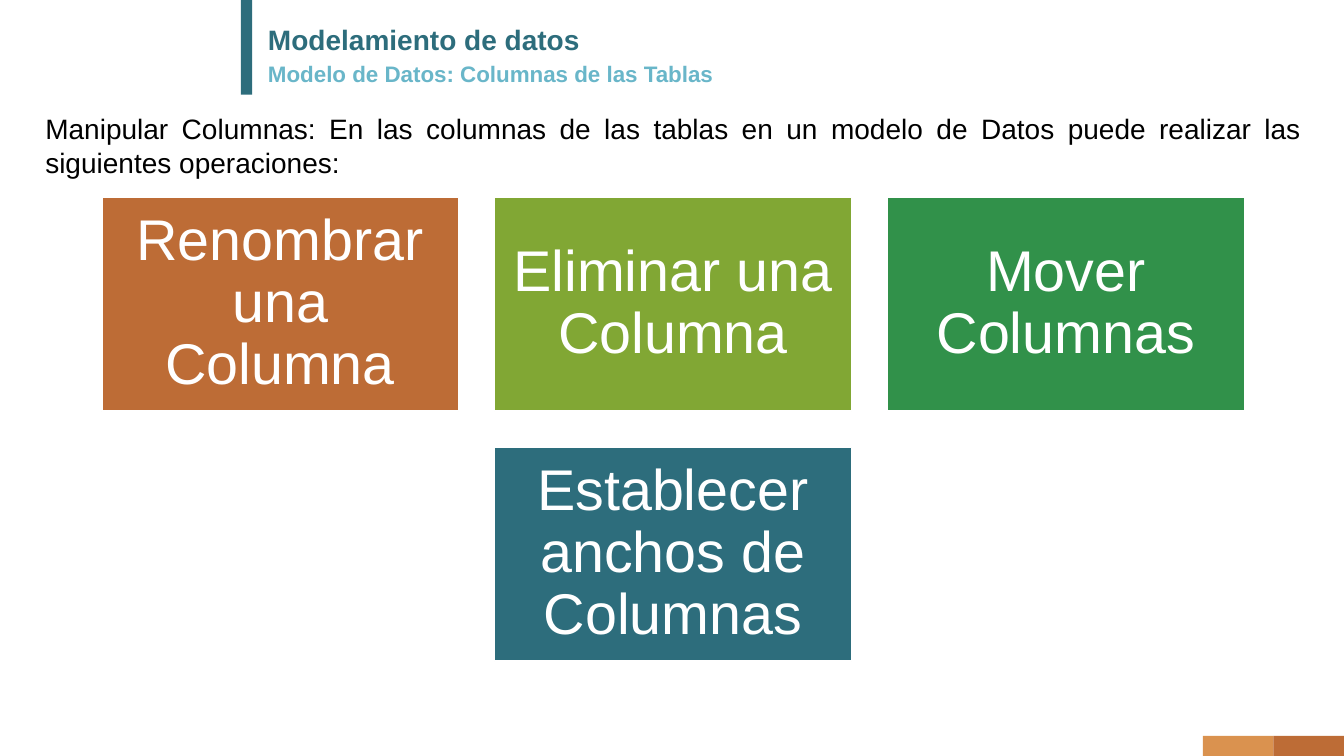
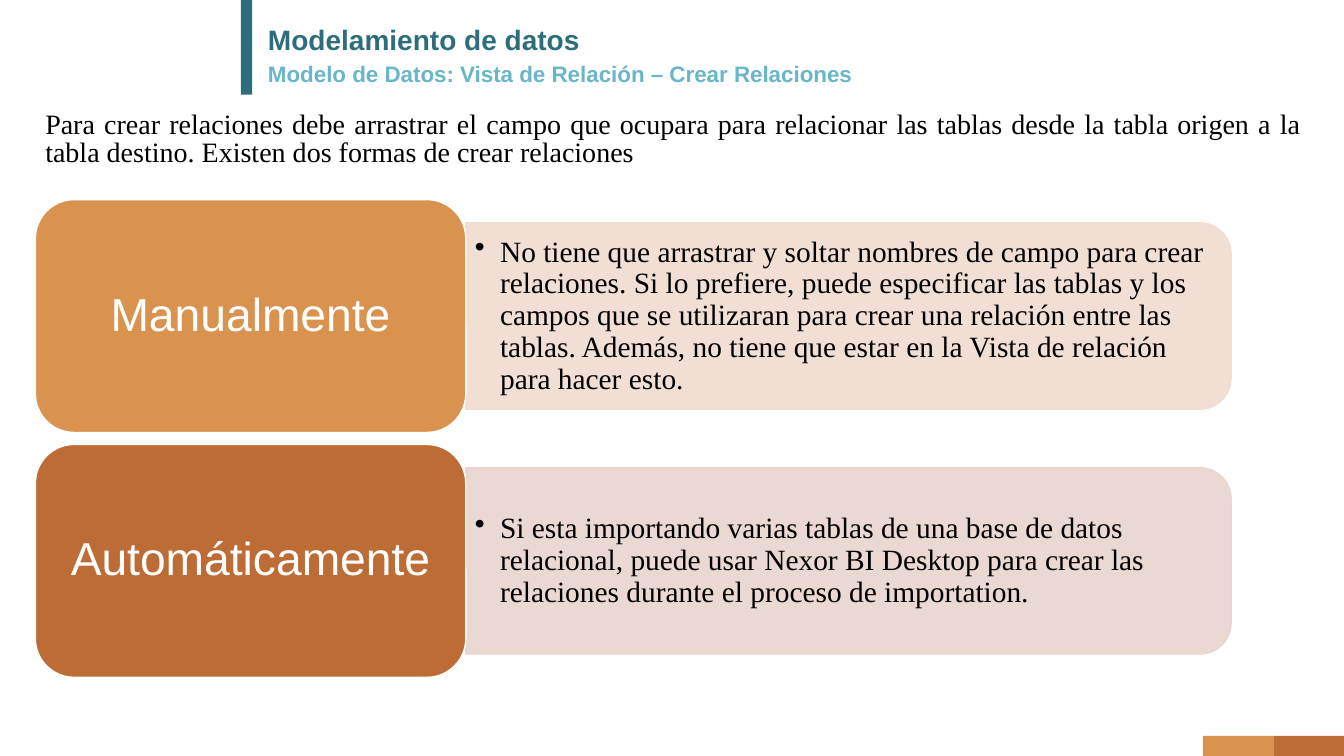
from dataclasses import dataclass

import pptx
import pptx.dml.color
import pptx.enum.shapes
import pptx.enum.text
import pptx.oxml.ns
import pptx.util
from lxml import etree

Inches = pptx.util.Inches
Pt = pptx.util.Pt
SHAPE = pptx.enum.shapes.MSO_SHAPE
ALIGN = pptx.enum.text.PP_ALIGN
ANCHOR = pptx.enum.text.MSO_ANCHOR
qn = pptx.oxml.ns.qn

COLORS = {
    "teal": "2D6D7C", "sky": "69B6C9", "amber": "DA924F", "rust": "BD6C36",
    "lime": "81A734", "green": "31914A", "peach": "F1DCD0", "rose": "E8D4CE",
    "white": "FFFFFF", "black": "000000",
}
SANS, SERIF = "Arial", "Times New Roman"
DEFAULT_INSETS = (0.1, 0.05)


@dataclass
class Box:
    left: float
    top: float
    width: float
    height: float

    def inner(self, left, top, width, height):
        """Return an inner box given in percent of this one."""
        return Box(self.left + self.width * left / 100,
                   self.top + self.height * top / 100,
                   self.width * width / 100, self.height * height / 100)

    def inches(self):
        return [Inches(v) for v in (self.left, self.top, self.width, self.height)]


PAGE = Box(0, 0, 13.33, 7.5)
ACCENT = PAGE.inner(17.93, 0, 0.83, 12.53)
TITLE = PAGE.inner(19.2, 2.8, 78.4, 5.33)
SUBTITLE = PAGE.inner(19.2, 7.73, 78.4, 5.33)
INTRO = PAGE.inner(2.63, 14.13, 94.97, 10.27)
FOOTER = PAGE.inner(89.5, 97.33, 10.5, 2.67)
CARDS = PAGE.inner(7.58, 26.13, 85, 61.33)
METHODS = PAGE.inner(2.63, 26.4, 88.97, 63.2)


def rgb(name):
    return pptx.dml.color.RGBColor.from_string(COLORS[name])


def add_block(slide, box, fill, kind=SHAPE.RECTANGLE, line=None):
    shape = slide.shapes.add_shape(kind, *box.inches())
    shape.shadow.inherit = False
    shape.fill.solid()
    shape.fill.fore_color.rgb = rgb(fill)
    if line:
        shape.line.color.rgb = rgb(line)
        shape.line.width = Pt(1)
    else:
        shape.line.fill.background()
    return shape


def write(shape, text, size, color, font=SANS, bold=False, align=ALIGN.LEFT,
          spacing=0.9, anchor=ANCHOR.TOP, insets=DEFAULT_INSETS, bullet=False):
    frame = shape.text_frame
    frame.word_wrap = True
    frame.vertical_anchor = anchor
    frame.margin_left = frame.margin_right = Inches(insets[0])
    frame.margin_top = frame.margin_bottom = Inches(insets[1])
    paragraph = frame.paragraphs[0]
    if bullet:
        properties = paragraph._p.get_or_add_pPr()
        properties.set("marL", str(Inches(0.25)))
        properties.set("indent", str(-Inches(0.25)))
        etree.SubElement(properties, qn("a:buChar"), char="•")
    paragraph.alignment = align
    paragraph.line_spacing = spacing
    run = paragraph.add_run()
    run.text = text
    run.font.name = font
    run.font.size = Pt(size)
    run.font.bold = bold
    run.font.color.rgb = rgb(color)


def add_text(slide, box, text, size, color, **style):
    write(slide.shapes.add_textbox(*box.inches()), text, size, color, **style)


def add_base_slide(presentation, subtitle):
    """Add a slide with the accent bar, footer band and both titles."""
    slide = presentation.slides.add_slide(presentation.slide_layouts[6])
    add_block(slide, ACCENT, "teal")
    for index, color in enumerate(("amber", "rust")):
        add_block(slide, FOOTER.inner(50 * index, 0, 50, 100), color)
    add_text(slide, TITLE, "Modelamiento de datos", 20, "teal", bold=True)
    add_text(slide, SUBTITLE, subtitle, 16, "sky", bold=True)
    return slide


def add_cards(slide, box, cards, columns=3, gap=0.36):
    """Lay cards out in rows, centring a row that is not full."""
    rows = -(-len(cards) // columns)
    width = (box.width - gap * (columns - 1)) / columns
    height = (box.height - gap * (rows - 1)) / rows
    for index, (text, color) in enumerate(cards):
        row, column = divmod(index, columns)
        missing = columns - min(columns, len(cards) - row * columns)
        place = Box(box.left + (column + missing / 2) * (width + gap),
                    box.top + row * (height + gap), width, height)
        card = add_block(slide, place, color, line="white")
        write(card, text, 41, "white", align=ALIGN.CENTER,
              anchor=ANCHOR.MIDDLE, insets=(0.17, 0.17))


def add_panel(slide, box, color):
    """Add a translucent panel whose right corners are rounded."""
    upright = Box(box.left + (box.width - box.height) / 2,
                  box.top + (box.height - box.width) / 2,
                  box.height, box.width)
    panel = add_block(slide, upright, color, SHAPE.ROUND_2_SAME_RECTANGLE, color)
    panel.rotation = 90
    for tint in panel._element.spPr.iter(qn("a:srgbClr")):
        etree.SubElement(tint, qn("a:alpha"), val="90000")


def add_method(slide, box, label, detail, color, panel_color):
    panel = box.inner(36, 10, 64, 80)
    add_panel(slide, panel, panel_color)
    add_text(slide, panel.inner(0, 5, 98.8, 90), detail, 21, "black", font=SERIF,
             anchor=ANCHOR.MIDDLE, insets=(0.09, 0.04), bullet=True)
    name = add_block(slide, box.inner(0, 0, 36, 100), color,
                     SHAPE.ROUNDED_RECTANGLE, "white")
    write(name, label, 33, "white", align=ALIGN.CENTER,
          anchor=ANCHOR.MIDDLE, insets=(0.14, 0.07))


def build_columns_slide(presentation):
    slide = add_base_slide(presentation, "Modelo de Datos: Columnas de las Tablas")
    add_text(slide, INTRO,
             "Manipular Columnas: En las columnas de las tablas en un modelo de "
             "Datos puede realizar las siguientes operaciones:",
             20, "black", align=ALIGN.JUSTIFY, spacing=1.0)
    add_cards(slide, CARDS, [
        ("Renombrar una Columna", "rust"),
        ("Eliminar una Columna", "lime"),
        ("Mover Columnas", "green"),
        ("Establecer anchos de Columnas", "teal"),
    ])


def build_relations_slide(presentation):
    slide = add_base_slide(
        presentation, "Modelo de Datos: Vista de Relación – Crear Relaciones")
    add_text(slide, INTRO,
             "Para crear relaciones debe arrastrar el campo que ocupara para "
             "relacionar las tablas desde la tabla origen a la tabla destino. "
             "Existen dos formas de crear relaciones",
             20, "black", font=SERIF, align=ALIGN.JUSTIFY, spacing=Pt(20.2))
    methods = [
        ("Manualmente",
         "No tiene que arrastrar y soltar nombres de campo para crear relaciones. "
         "Si lo prefiere, puede especificar las tablas y los campos que se "
         "utilizaran para crear una relación entre las tablas. Además, no tiene "
         "que estar en la Vista de relación para hacer esto.",
         "amber", "peach"),
        ("Automáticamente",
         "Si esta importando varias tablas de una base de datos relacional, puede "
         "usar Nexor BI Desktop para crear las relaciones durante el proceso de "
         "importation.",
         "rust", "rose"),
    ]
    for index, method in enumerate(methods):
        add_method(slide, METHODS.inner(0, 51.25 * index, 100, 48.75), *method)


def main():
    presentation = pptx.Presentation()
    presentation.slide_width = Inches(PAGE.width)
    presentation.slide_height = Inches(PAGE.height)
    build_columns_slide(presentation)
    build_relations_slide(presentation)
    presentation.save("out.pptx")


if __name__ == "__main__":
    main()
